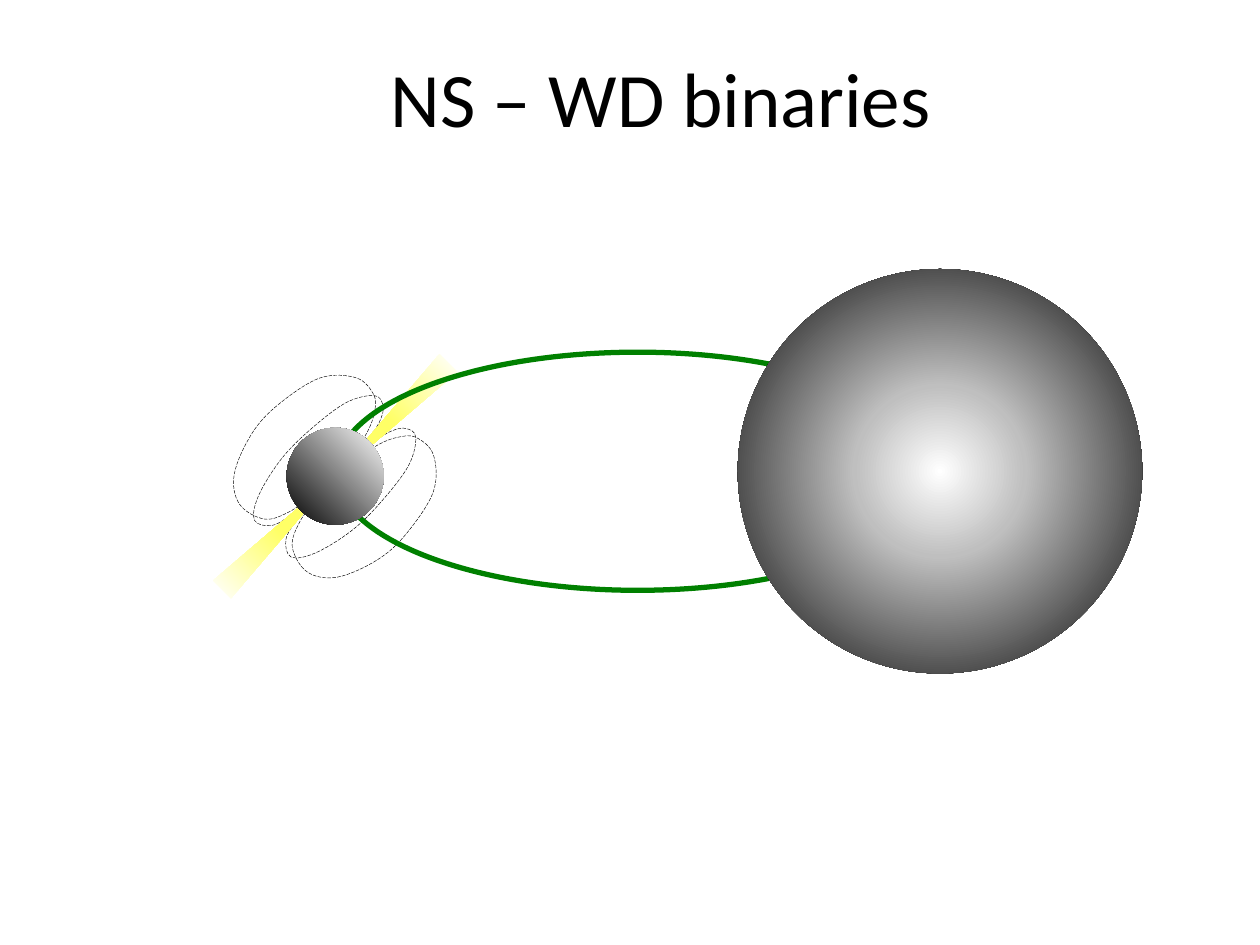
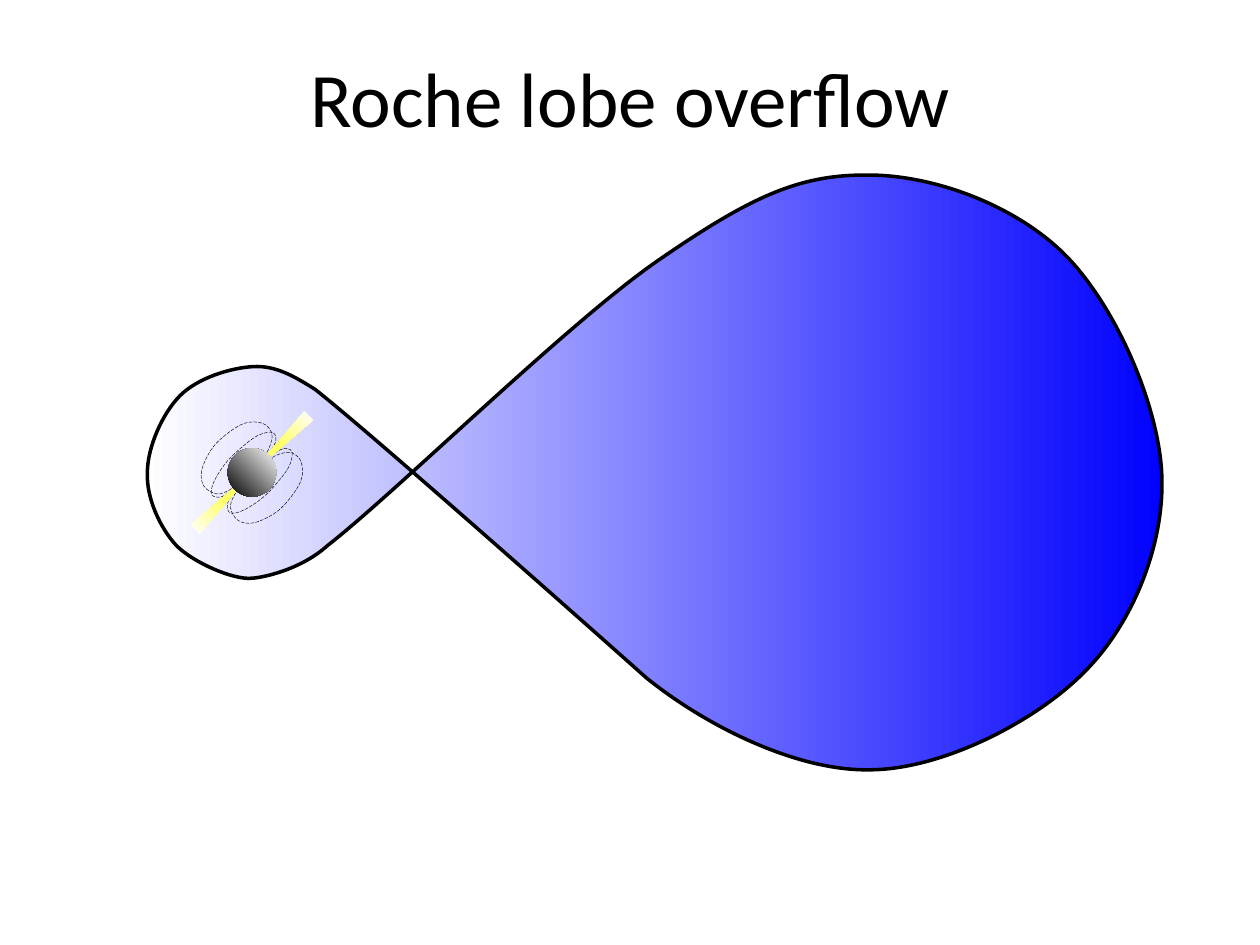
from dataclasses import dataclass
from itertools import chain

from lxml import etree
from pptx import Presentation
from pptx.dml.color import RGBColor
from pptx.enum.dml import MSO_LINE
from pptx.enum.shapes import MSO_SHAPE as SHAPE
from pptx.enum.text import MSO_ANCHOR, MSO_AUTO_SIZE, PP_ALIGN as ALIGN
from pptx.oxml import parse_xml
from pptx.oxml.ns import nsdecls, qn
from pptx.util import Inches, Pt


@dataclass(frozen=True)
class Theme:
    font: str = "Calibri"
    title_size: int = 44
    black: str = "000000"
    white: str = "FFFFFF"
    silver: str = "BFBFBF"
    beam: str = "FFFF66"
    orbit: str = "008000"
    gas: str = "0000FF"
    field_width: float = 0.25
    lobe_width: float = 2
    orbit_width: float = 3


T = Theme()
TITLE_TOP, TITLE_HEIGHT = 0.35, 0.84
CENTRE, TOP_RIGHT = (50, 50, 50, 50), (100, 0, 0, 100)

# Field line knots, in inches from the centre of the neutron star
OUTER_FIELD = [
    (-0.16, 0.20), (-0.28, 0.36), (-0.34, 0.56), (-0.22, 0.76), (0.02, 0.80),
    (0.34, 0.66), (0.57, 0.45), (0.78, 0.12), (0.78, -0.17), (0.64, -0.31),
    (0.50, -0.31), (0.36, -0.26), (0.20, -0.16),
]
INNER_FIELD = [
    (-0.18, 0.19), (-0.30, 0.34), (-0.39, 0.50), (-0.35, 0.64), (-0.16, 0.61),
    (0.12, 0.44), (0.35, 0.22), (0.58, -0.08), (0.64, -0.31), (0.56, -0.38),
    (0.45, -0.36), (0.33, -0.29), (0.18, -0.18),
]

# Each row holds two control points and the end of one curve
ROCHE_START = (2.5, 3.09)
ROCHE_CURVES = [
    ((2.34, 2.99), (2.19, 2.90), (2.01, 2.91)),
    ((1.83, 2.92), (1.57, 3.00), (1.43, 3.14)),
    ((1.29, 3.28), (1.17, 3.55), (1.17, 3.75)),
    ((1.16, 3.95), (1.27, 4.19), (1.40, 4.33)),
    ((1.54, 4.47), (1.85, 4.60), (1.99, 4.59)),
    ((2.06, 4.59), (2.38, 4.53), (2.60, 4.33)),
    ((3.14, 3.91), (4.51, 2.56), (5.22, 2.07)),
    ((5.93, 1.58), (6.32, 1.39), (6.86, 1.39)),
    ((7.40, 1.38), (8.06, 1.63), (8.45, 2.02)),
    ((8.85, 2.42), (9.19, 3.20), (9.22, 3.75)),
    ((9.25, 4.30), (9.00, 4.94), (8.61, 5.33)),
    ((8.23, 5.72), (7.48, 6.11), (6.90, 6.11)),
    ((6.32, 6.12), (5.60, 5.76), (5.13, 5.38)),
    ((5.13, 5.38), (3.02, 3.50), ROCHE_START),
]


def set_attrs(obj, **values):
    for name, value in values.items():
        setattr(obj, name, value)


def set_gradient(sp, stops, focus=None):
    """Fill from (percent, colour) stops: round about focus, else left to right."""
    sp.fill.background()
    gs = "".join(f'<a:gs pos="{pos * 1000}"><a:srgbClr val="{color}"/></a:gs>'
                 for pos, color in stops)
    if focus:
        rect = " ".join(f'{side}="{v * 1000}"' for side, v in zip("ltrb", focus))
        shade = f'<a:path path="circle"><a:fillToRect {rect}/></a:path>'
    else:
        shade = '<a:lin ang="0" scaled="0"/>'
    grad = parse_xml(f'<a:gradFill {nsdecls("a")} rotWithShape="1">'
                     f'<a:gsLst>{gs}</a:gsLst>{shade}</a:gradFill>')
    spPr = sp._element.spPr
    spPr.replace(spPr.find(qn("a:noFill")), grad)


def set_style(sp, stops=None, focus=None, line=None, width=1, dash=None):
    sp.shadow.inherit = False
    if stops:
        set_gradient(sp, stops, focus)
    else:
        sp.fill.background()
    if line:
        sp.line.color.rgb = RGBColor.from_string(line)
        set_attrs(sp.line, width=Pt(width), dash_style=dash)
    else:
        sp.line.fill.background()


def add_centred(slide, kind, centre, size, rotation=0, **style):
    (cx, cy), (w, h) = centre, size
    sp = slide.shapes.add_shape(kind, Inches(cx - w / 2), Inches(cy - h / 2),
                                Inches(w), Inches(h))
    sp.rotation = rotation
    set_style(sp, **style)


def add_curve(slide, start, curves, close=False, **style):
    """Build a freeform whose every three line steps become one Bezier curve."""
    points = [(Inches(x), Inches(y)) for x, y in chain.from_iterable(curves)]
    builder = slide.shapes.build_freeform(*(Inches(v) for v in start))
    builder.add_line_segments(points, close=close)
    sp = builder.convert_to_shape()
    steps = list(sp._element.iter(qn("a:lnTo")))
    for i in range(0, len(steps), 3):
        bezier = etree.Element(qn("a:cubicBezTo"))
        steps[i].addprevious(bezier)
        for step in steps[i:i + 3]:
            bezier.append(step[0])
            step.getparent().remove(step)
    set_style(sp, **style)


def smooth_curves(knots):
    """Bezier rows of a smooth curve through the knots (Catmull-Rom)."""
    ends = [knots[0], *knots, knots[-1]]
    for before, a, b, after in zip(ends, ends[1:], ends[2:], ends[3:]):
        yield (tuple(p + (r - q) / 6 for p, q, r in zip(a, before, b)),
               tuple(p - (r - q) / 6 for p, q, r in zip(b, a, after)), b)


def add_magnetosphere(slide, centre, scale=1):
    """Field lines mirrored about the beam, and the beam itself."""
    cx, cy = centre
    for field in (OUTER_FIELD, INNER_FIELD):
        for side in (field, [(-y, -x) for x, y in field]):
            knots = [(cx + x * scale, cy + y * scale) for x, y in side]
            add_curve(slide, knots[0], smooth_curves(knots), line=T.black,
                      width=T.field_width, dash=MSO_LINE.LONG_DASH)
    add_centred(slide, SHAPE.FLOWCHART_COLLATE, centre,
                (0.2 * scale, 2.54 * scale), rotation=45,
                stops=[(45, T.beam), (100, T.white)], focus=CENTRE)


def add_neutron_star(slide, centre, scale=1):
    add_centred(slide, SHAPE.OVAL, centre, (0.77 * scale, 0.77 * scale),
                stops=[(0, T.white), (100, T.black)], focus=TOP_RIGHT)


def add_title_slide(prs, text, left, width, align):
    slide = prs.slides.add_slide(prs.slide_layouts[5])
    sp = slide.shapes.title
    set_attrs(sp, left=Inches(left), top=Inches(TITLE_TOP),
              width=Inches(width), height=Inches(TITLE_HEIGHT))
    tf = sp.text_frame
    tf.text = text
    set_attrs(tf, word_wrap=False, auto_size=MSO_AUTO_SIZE.SHAPE_TO_FIT_TEXT,
              vertical_anchor=MSO_ANCHOR.TOP)
    p = tf.paragraphs[0]
    p.alignment = align
    font = p.runs[0].font
    set_attrs(font, name=T.font, size=Pt(T.title_size))
    font.color.rgb = RGBColor.from_string(T.black)
    return slide


def add_binary_slide(prs):
    slide = add_title_slide(prs, "NS – WD binaries", 3, 4.53, ALIGN.LEFT)
    star = (2.66, 3.78)
    add_magnetosphere(slide, star)
    add_centred(slide, SHAPE.OVAL, (5.06, 3.74), (4.79, 1.89),
                line=T.orbit, width=T.orbit_width)
    add_neutron_star(slide, star)
    add_centred(slide, SHAPE.OVAL, (7.46, 3.74), (3.21, 3.21), focus=CENTRE,
                stops=[(0, T.white), (30, T.silver), (100, T.black)])


def add_roche_slide(prs):
    slide = add_title_slide(prs, "Roche lobe overflow", 2.34, 5.33, ALIGN.CENTER)
    add_curve(slide, ROCHE_START, ROCHE_CURVES, close=True,
              stops=[(0, T.white), (100, T.gas)],
              line=T.black, width=T.lobe_width)
    star = (2, 3.75)
    add_magnetosphere(slide, star, scale=0.5)
    add_neutron_star(slide, star, scale=0.5)


def main():
    prs = Presentation()
    set_attrs(prs, slide_width=Inches(10), slide_height=Inches(7.5))
    add_binary_slide(prs)
    add_roche_slide(prs)
    prs.save("out.pptx")


if __name__ == "__main__":
    main()
